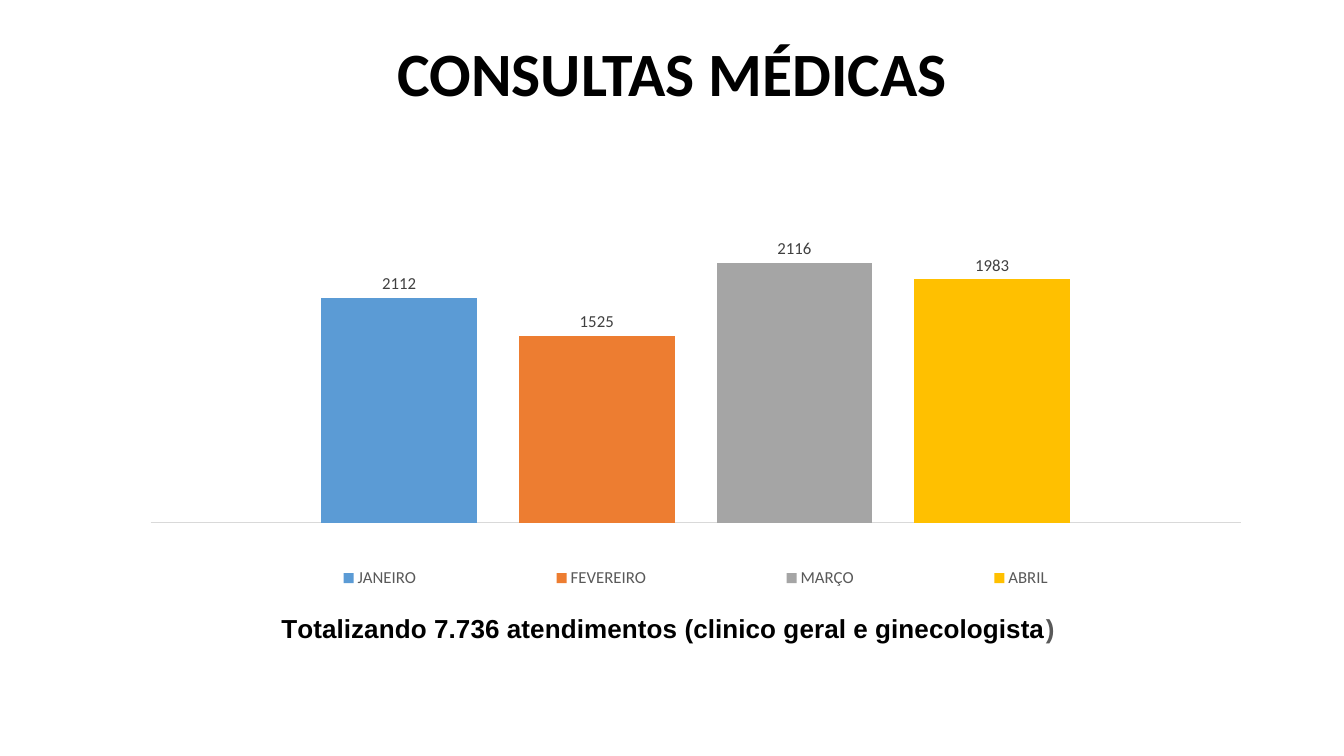
from dataclasses import dataclass

from pptx import Presentation
from pptx.chart.chart import Chart
from pptx.chart.data import CategoryChartData
from pptx.chart.series import BarSeries
from pptx.dml.color import RGBColor
from pptx.enum.chart import (XL_CHART_TYPE, XL_LABEL_POSITION,
                             XL_LEGEND_POSITION, XL_TICK_LABEL_POSITION,
                             XL_TICK_MARK)
from pptx.enum.text import MSO_ANCHOR, PP_ALIGN
from pptx.oxml import parse_xml
from pptx.oxml.ns import nsdecls, qn
from pptx.util import Emu, Pt

COLUMNS = XL_CHART_TYPE.COLUMN_CLUSTERED
OUTSIDE_END = XL_LABEL_POSITION.OUTSIDE_END
BOTTOM = XL_LEGEND_POSITION.BOTTOM
NO_LABELS = XL_TICK_LABEL_POSITION.NONE
NO_TICKS = XL_TICK_MARK.NONE
MIDDLE = MSO_ANCHOR.MIDDLE
CENTER = PP_ALIGN.CENTER

EMU_PER_PX = 9144  # 100 px to the inch
COLORS = {
    "black": "000000", "label": "404040", "muted": "595959", "axis": "D9D9D9",
    "blue": "5B9BD5", "orange": "ED7D31", "gray": "A5A5A5", "gold": "FFC000",
}


@dataclass(frozen=True)
class Month:
    name: str
    visits: int
    color: str
    label: str = ""  # replaces the value shown above the column


MONTHS = [
    Month("JANEIRO", 1834, "blue", "2112"),
    Month("FEVEREIRO", 1525, "orange"),
    Month("MARÇO", 2116, "gray"),
    Month("ABRIL", 1983, "gold"),
]


def px(length: int) -> Emu:
    return Emu(length * EMU_PER_PX)


def rgb(name: str) -> RGBColor:
    return RGBColor.from_string(COLORS[name])


def style_font(font, size: float, color: str, face: str = "Calibri",
               bold: bool = False) -> None:
    font.name, font.size, font.bold = face, Pt(size), bold
    font.color.rgb = rgb(color)


def place(part, index: int, inner: bool = False, **fractions: float) -> None:
    """Give a chart part a manual layout, as fractions of the chart."""
    for old in part.findall(qn("c:layout")):
        part.remove(old)
    target = '<c:layoutTarget val="inner"/>' if inner else ""
    modes = '<c:xMode val="edge"/><c:yMode val="edge"/>'
    values = "".join(f'<c:{key} val="{value}"/>' for key, value in fractions.items())
    part.insert(index, parse_xml(
        f'<c:layout {nsdecls("c")}><c:manualLayout>{target}{modes}{values}'
        '</c:manualLayout></c:layout>'))


def style_column(column: BarSeries, month: Month) -> None:
    column.invert_if_negative = False
    column.format.fill.solid()
    column.format.fill.fore_color.rgb = rgb(month.color)
    labels = column.data_labels
    labels.show_value = True
    labels.position = OUTSIDE_END
    style_font(labels.font, 12, "label")
    if month.label:
        own_label = column.points[0].data_label
        own_text = own_label.text_frame.paragraphs[0].add_run()
        own_text.text = month.label
        style_font(own_text.font, 12, "label")
        own_label.position = OUTSIDE_END


def style_axes(chart: Chart) -> None:
    months_axis, visits_axis = chart.category_axis, chart.value_axis
    months_axis.tick_label_position = NO_LABELS
    months_axis.major_tick_mark = months_axis.minor_tick_mark = NO_TICKS
    months_axis.format.line.color.rgb = rgb("axis")
    months_axis.format.line.width = Pt(0.75)
    visits_axis.visible = False
    visits_axis.has_major_gridlines = False
    visits_axis.minimum_scale, visits_axis.maximum_scale = 0, 2500


def add_total(chart: Chart) -> None:
    chart.has_title = True
    total = chart.chart_title.text_frame.paragraphs[0]
    for text, color in [
        ("Totalizando 7.736 atendimentos (clinico geral e ginecologista", "black"),
        (")", "muted"),
    ]:
        run = total.add_run()
        run.text = text
        style_font(run.font, 18.6, color, "Arial", True)


def main() -> None:
    prs = Presentation()
    prs.slide_width, prs.slide_height = px(1333), px(750)
    slide = prs.slides.add_slide(prs.slide_layouts[5])

    # Heading, with an empty second line
    heading = slide.shapes.title
    heading.left, heading.top, heading.width, heading.height = map(
        px, (92, 40, 1150, 145))
    heading.text_frame.vertical_anchor = MIDDLE
    heading_line = heading.text_frame.paragraphs[0]
    heading_line.alignment = CENTER
    heading_line.line_spacing = 0.9
    heading_run = heading_line.add_run()
    heading_run.text = "CONSULTAS MÉDICAS"
    style_font(heading_run.font, 44, "black", bold=True)
    heading_line.add_line_break()

    # Visits per month
    visits = CategoryChartData()
    visits.categories = ["1"]
    for month in MONTHS:
        visits.add_series(month.name, [month.visits])
    chart = slide.shapes.add_chart(
        COLUMNS, *map(px, (92, 200, 1150, 476)), visits).chart
    style_font(chart.font, 10, "black")
    plot = chart.plots[0]
    plot.vary_by_categories = False
    plot.gap_width, plot.overlap = 219, -27
    for column, month in zip(plot.series, MONTHS):
        style_column(column, month)
    style_axes(chart)

    # Legend and total below the columns
    chart.has_legend = True
    chart.legend.position = BOTTOM
    chart.legend.include_in_layout = False
    style_font(chart.legend.font, 12, "muted")
    add_total(chart)

    plot_area = chart.element.find(".//" + qn("c:plotArea"))
    place(plot_area, 0, True, x=0.05, y=0.03, w=0.94, h=0.64)
    place(chart.element.find(".//" + qn("c:legend")), 1, x=0.1, y=0.75, w=0.84, h=0.07)
    place(chart.element.find(".//" + qn("c:title")), 1, x=0.16, y=0.85)

    prs.save("out.pptx")


if __name__ == "__main__":
    main()
